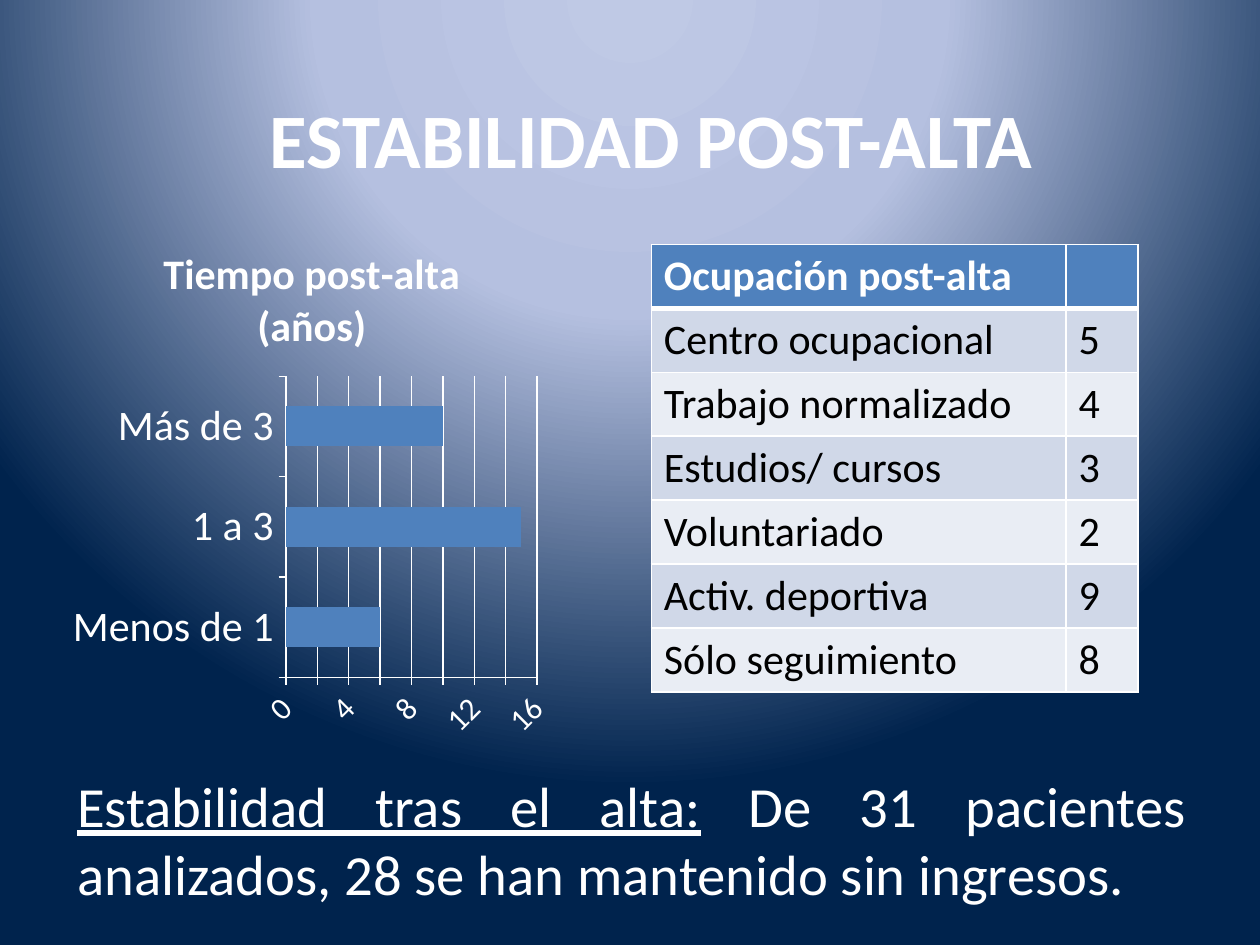
from dataclasses import dataclass

from lxml.etree import SubElement
from pptx import Presentation
from pptx.chart.data import CategoryChartData as ChartData
from pptx.dml.color import RGBColor as Rgb
from pptx.enum.chart import XL_CHART_TYPE as ChartType, XL_TICK_MARK as Tick
from pptx.enum.text import MSO_ANCHOR as Anchor, PP_ALIGN as Align
from pptx.oxml import parse_xml
from pptx.oxml.ns import nsdecls, qn
from pptx.util import Cm, Pt


@dataclass(frozen=True)
class Theme:
    font: str = "Calibri"
    white: str = "FFFFFF"
    black: str = "000000"
    blue: str = "4F81BD"
    bands: tuple = ("D0D8E8", "E9EDF4")
    backdrop: tuple = ((0, "BFC9E5"), (40, "B5C0E0"), (100, "00234D"))
    heading_size: float = 44
    summary_size: float = 32.4
    body_size: float = 24
    scale_size: float = 18


@dataclass(frozen=True)
class Box:
    left: float
    top: float
    width: float
    height: float

    def lengths(self) -> tuple:
        return tuple(Cm(n) for n in (self.left, self.top, self.width, self.height))


@dataclass(frozen=True)
class Occupation:
    name: str
    patients: str
    header: bool = False


THEME = Theme()
HEADING_BOX = Box(1.7, 1.19, 22.86, 3.18)
SUMMARY_BOX = Box(1.3, 15.32, 22.86, 3.18)
CHART_BOX = Box(1.27, 4.45, 10.03, 10.67)
COLUMN_WIDTHS = (8.36, 1.45)
ROW_HEIGHT = 1.27
TIME_TITLE = "Tiempo post-alta (años)"
TIME_GROUPS = {"Menos de 1": 6, "1 a 3": 15, "Más de 3": 10}
OCCUPATIONS = (
    Occupation("Ocupación post-alta", "", header=True),
    Occupation("Centro ocupacional", "5"),
    Occupation("Trabajo normalizado", "4"),
    Occupation("Estudios/ cursos", "3"),
    Occupation("Voluntariado", "2"),
    Occupation("Activ. deportiva", "9"),
    Occupation("Sólo seguimiento", "8"),
)


def style(font, size: float, color: str = THEME.white, bold: bool = False) -> None:
    font.name, font.size, font.bold = THEME.font, Pt(size), bold
    font.color.rgb = Rgb.from_string(color)


def paint(fill, color: str) -> None:
    fill.solid()
    fill.fore_color.rgb = Rgb.from_string(color)


def paint_backdrop(slide) -> None:
    """Circular gradient centred above the slide."""
    slide.background.fill.gradient()
    gradient = next(slide.element.iter(qn("a:gradFill")))
    stops = "".join(
        f'<a:gs pos="{percent * 1000}"><a:srgbClr val="{color}"/></a:gs>'
        for percent, color in THEME.backdrop)
    gradient.getparent().replace(gradient, parse_xml(
        f'<a:gradFill {nsdecls("a")} rotWithShape="1"><a:gsLst>{stops}</a:gsLst>'
        '<a:path path="circle"><a:fillToRect l="50000" t="-80000" r="50000" b="180000"/>'
        '</a:path></a:gradFill>'))


def add_heading(slide, text: str) -> None:
    frame = slide.shapes.add_textbox(*HEADING_BOX.lengths()).text_frame
    frame.word_wrap = True
    frame.vertical_anchor = Anchor.MIDDLE
    frame.text = text
    frame.paragraphs[0].alignment = Align.CENTER
    style(frame.paragraphs[0].runs[0].font, THEME.heading_size, bold=True)


def fill_summary(title, label: str, finding: str) -> None:
    title.left, title.top, title.width, title.height = SUMMARY_BOX.lengths()
    title.text_frame.vertical_anchor = Anchor.MIDDLE
    paragraph = title.text_frame.paragraphs[0]
    paragraph.text = label
    paragraph.add_run().text = finding
    paragraph.alignment = Align.JUSTIFY
    for run in paragraph.runs:
        style(run.font, THEME.summary_size)
    paragraph.runs[0].font.underline = True


def add_time_chart(slide) -> None:
    times = ChartData()
    times.categories = list(TIME_GROUPS)
    times.add_series(TIME_TITLE, list(TIME_GROUPS.values()))
    chart = slide.shapes.add_chart(
        ChartType.BAR_STACKED, *CHART_BOX.lengths(), times).chart
    style(chart.font, THEME.scale_size)
    chart.has_legend = False

    chart.has_title = True
    chart.chart_title.include_in_layout = False
    caption = chart.chart_title.text_frame
    caption.text = TIME_TITLE
    style(caption.paragraphs[0].runs[0].font, THEME.body_size, bold=True)

    bars = chart.plots[0]
    bars.gap_width, bars.overlap, bars.vary_by_categories = 150, 100, False
    paint(bars.series[0].format.fill, THEME.blue)

    groups, scale = chart.category_axis, chart.value_axis
    scale.has_major_gridlines = True
    for axis, size in ((groups, THEME.body_size), (scale, THEME.scale_size)):
        axis.major_tick_mark = Tick.OUTSIDE
        style(axis.tick_labels.font, size)
        paint(axis.format.line.fill, THEME.white)
    paint(scale.major_gridlines.format.line.fill, THEME.white)


def add_borders(cell, bottom: float) -> None:
    """Borders come before the fill in the cell properties."""
    properties = cell._tc.get_or_add_tcPr()
    for side, width in (("L", 1), ("R", 1), ("T", 1), ("B", bottom)):
        line = SubElement(properties, qn(f"a:ln{side}"), w=str(Pt(width)))
        solid = SubElement(line, qn("a:solidFill"))
        SubElement(solid, qn("a:srgbClr"), val=THEME.white)


def add_occupation_table(slide) -> None:
    box = Box(13.13, 4.93, sum(COLUMN_WIDTHS), ROW_HEIGHT * len(OCCUPATIONS))
    table = slide.shapes.add_table(
        len(OCCUPATIONS), len(COLUMN_WIDTHS), *box.lengths()).table
    for column, width in zip(table.columns, COLUMN_WIDTHS):
        column.width = Cm(width)
    for index, occupation in enumerate(OCCUPATIONS):
        header = occupation.header
        fill = THEME.blue if header else THEME.bands[(index - 1) % 2]
        color = THEME.white if header else THEME.black
        for column, text in enumerate((occupation.name, occupation.patients)):
            cell = table.cell(index, column)
            add_borders(cell, bottom=3 if header else 1)
            paint(cell.fill, fill)
            cell.text_frame.text = text
            for run in cell.text_frame.paragraphs[0].runs:
                style(run.font, THEME.body_size, color, bold=header)


def main() -> None:
    deck = Presentation()
    deck.slide_width, deck.slide_height = Cm(25.4), Cm(19.05)
    slide = deck.slides.add_slide(deck.slide_layouts[5])
    paint_backdrop(slide)
    # Summary sentence in the title placeholder
    fill_summary(slide.shapes.title, "Estabilidad tras el alta:",
                 " De 31 pacientes analizados, 28 se han mantenido sin ingresos.")
    # Time and occupation after discharge
    add_time_chart(slide)
    add_occupation_table(slide)
    add_heading(slide, "ESTABILIDAD POST-ALTA")
    deck.save("out.pptx")


if __name__ == "__main__":
    main()
